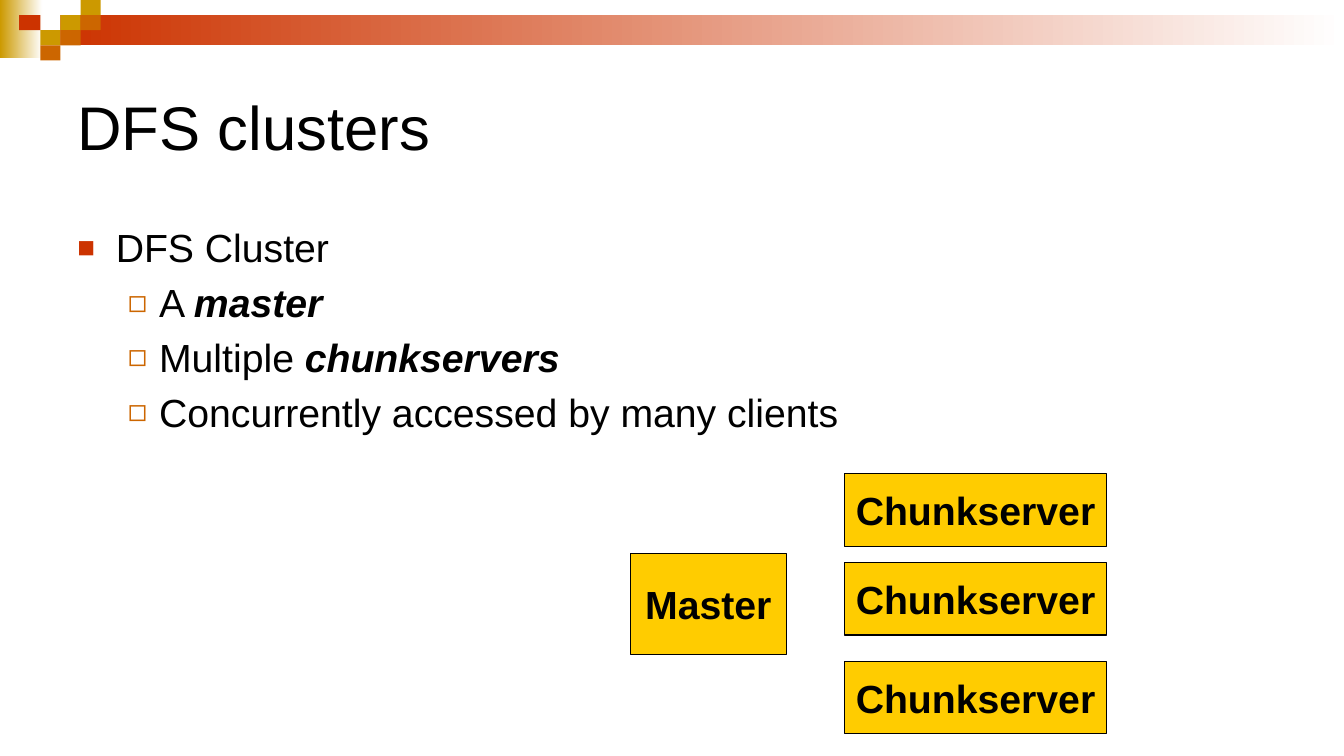
from dataclasses import dataclass

import lxml.etree
import pptx
import pptx.dml.color
import pptx.enum.shapes
import pptx.enum.text
import pptx.oxml.ns
import pptx.util

COL, ROW = 0.2, 0.15  # grid cell, inches
FONT = "Arial"
GOLD, RUST, RED = "CC9900", "CC6600", "CC3300"
BLACK, WHITE, AMBER = "000000", "FFFFFF", "FFCC00"


@dataclass
class Area:
    """A place on the grid, in columns and rows."""
    col: float
    row: float
    wide: float = 1
    high: float = 1

    def spot(self) -> list[int]:
        sides = (self.col * COL, self.row * ROW, self.wide * COL, self.high * ROW)
        return [pptx.util.Inches(side) for side in sides]


@dataclass
class Tile:
    area: Area
    fill: str
    fade: bool = False


@dataclass
class Node:
    name: str
    area: Area


@dataclass
class Mark:
    """Bullet style of one outline level."""
    char: str
    color: str
    size: int
    left: float
    hang: float


@dataclass
class Point:
    level: int
    plain: str
    strong: str = ""


TILES = [
    Tile(Area(0, 0, 2.1, 3.87), GOLD, True),
    Tile(Area(3, 1, 63.65, 2), RED, True),
    Tile(Area(3, 1), GOLD),
    Tile(Area(4, 0), GOLD),
    Tile(Area(4, 1), RUST),
    Tile(Area(2, 2), GOLD),
    Tile(Area(0.95, 1, 1.05), RED),
    Tile(Area(3, 2), RUST),
    Tile(Area(2, 3), RUST),
]
MARKS = [Mark("■", RED, 75, 0.38, 0.38), Mark("◻", RUST, 80, 0.81, 0.31)]
POINTS = [
    Point(0, "DFS Cluster"),
    Point(1, "A ", "master"),
    Point(1, "Multiple ", "chunkservers"),
    Point(1, "Concurrently accessed by many clients"),
]
NODES = [Node("Master", Area(31.25, 36.6, 7.75, 6.67))]
NODES += [Node("Chunkserver", Area(41.9, row, 12.95, 4.8))
          for row in (31.33, 37.2, 43.73)]


def tint(code: str) -> pptx.dml.color.RGBColor:
    return pptx.dml.color.RGBColor.from_string(code)


def style(run, size: float, bold: bool = False, slant: bool = False) -> None:
    font = run.font
    font.name, font.size = FONT, pptx.util.Pt(size)
    font.bold, font.italic = bold, slant
    font.color.rgb = tint(BLACK)


def add_rect(slide, area: Area):
    rect = slide.shapes.add_shape(
        pptx.enum.shapes.MSO_SHAPE.RECTANGLE, *area.spot())
    rect.shadow.inherit = False
    return rect


def add_tile(slide, tile: Tile) -> None:
    rect = add_rect(slide, tile.area)
    rect.line.fill.background()
    if tile.fade:
        rect.fill.gradient()
        rect.fill.gradient_angle = 0
        for stop, code in zip(rect.fill.gradient_stops, (tile.fill, WHITE)):
            stop.color.rgb = tint(code)
    else:
        rect.fill.solid()
        rect.fill.fore_color.rgb = tint(tile.fill)


def add_node(slide, node: Node) -> None:
    rect = add_rect(slide, node.area)
    rect.fill.solid()
    rect.fill.fore_color.rgb = tint(AMBER)
    rect.line.color.rgb = tint(BLACK)
    rect.line.width = pptx.util.Pt(0.75)
    frame = rect.text_frame
    frame.text = node.name
    frame.word_wrap = False
    frame.vertical_anchor = pptx.enum.text.MSO_ANCHOR.MIDDLE
    para = frame.paragraphs[0]
    para.alignment = pptx.enum.text.PP_ALIGN.CENTER
    style(para.runs[0], 28, bold=True)


def add_frame(slide, area: Area):
    frame = slide.shapes.add_textbox(*area.spot()).text_frame
    frame.word_wrap = True
    return frame


def set_mark(para, mark: Mark) -> None:
    props = para._p.get_or_add_pPr()
    props.set("marL", str(pptx.util.Inches(mark.left)))
    props.set("indent", str(-pptx.util.Inches(mark.hang)))

    def add(root, tag: str, **attrs: str):
        return lxml.etree.SubElement(root, pptx.oxml.ns.qn(tag), attrs)

    add(add(props, "a:spcBef"), "a:spcPct", val="20000")
    add(add(props, "a:buClr"), "a:srgbClr", val=mark.color)
    add(props, "a:buSzPct", val=str(mark.size * 1000))
    add(props, "a:buFont", typeface=FONT)
    add(props, "a:buChar", char=mark.char)


def add_list(slide, area: Area, points: list[Point]) -> None:
    frame = add_frame(slide, area)
    for index, point in enumerate(points):
        para = frame.add_paragraph() if index else frame.paragraphs[0]
        para.text = point.plain
        para.level = point.level
        set_mark(para, MARKS[point.level])
        style(para.runs[0], 28)
        if point.strong:
            run = para.add_run()
            run.text = point.strong
            style(run, 28, bold=True, slant=True)


def main() -> None:
    deck = pptx.Presentation()
    deck.slide_width = pptx.util.Inches(13.33)
    deck.slide_height = pptx.util.Inches(7.5)
    slide = deck.slides.add_slide(deck.slide_layouts[6])

    # Header band
    for tile in TILES:
        add_tile(slide, tile)

    # Title
    title = add_frame(slide, Area(3.35, 3.33, 60, 10))
    title.text = "DFS clusters"
    title.vertical_anchor = pptx.enum.text.MSO_ANCHOR.MIDDLE
    style(title.paragraphs[0].runs[0], 44)

    # Outline
    add_list(slide, Area(3.35, 14.47, 60, 28.33), POINTS)

    # Cluster diagram
    for node in NODES:
        add_node(slide, node)

    deck.save("out.pptx")


if __name__ == "__main__":
    main()
